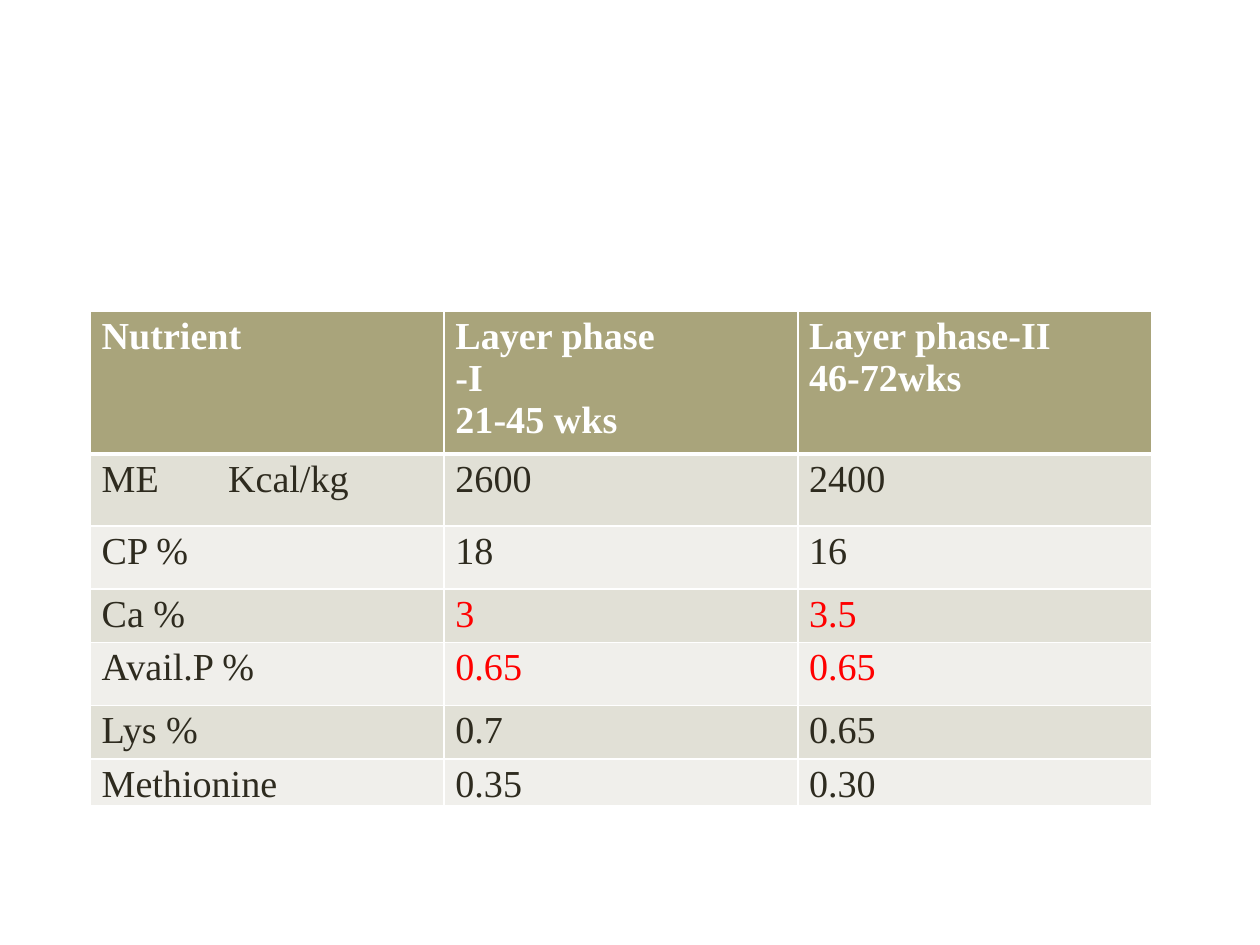
"""Build a slide with a table of layer feed nutrients by laying phase."""
import dataclasses

import pptx
import pptx.dml.color
import pptx.oxml.ns
import pptx.util
from lxml import etree

Cm = pptx.util.Cm


@dataclasses.dataclass(frozen=True)
class Theme:
    font: str = "Times New Roman"
    size: int = 24
    header_fill: str = "A9A47B"
    band_fills: tuple = ("E1E0D6", "F0EFEB")
    header_text: str = "FFFFFF"
    body_text: str = "2E2B1F"
    highlight: str = "FF0000"
    border: str = "FFFFFF"
    thin: int = 1
    thick: int = 3


THEME = Theme()
COLUMN_WIDTH = 7.86
ROW_HEIGHTS = (3.18, 1.6, 1.4, 1.19, 1.4, 1.19, 0.99)
UNIT_TAB = 2.81
HIGHLIGHTED_NUTRIENTS = ("Ca %", "Avail.P %")
NUTRIENTS = (
    (("Nutrient",), ("Layer phase", "-I", "21-45 wks"), ("Layer phase-II", "46-72wks")),
    (("ME\tKcal/kg",), ("2600",), ("2400",)),
    (("CP %",), ("18",), ("16",)),
    (("Ca %",), ("3",), ("3.5",)),
    (("Avail.P %",), ("0.65",), ("0.65",)),
    (("Lys %",), ("0.7",), ("0.65",)),
    (("Methionine",), ("0.35",), ("0.30",)),
)


def rgb(value):
    return pptx.dml.color.RGBColor.from_string(value)


def add_element(parent, tag, **attributes):
    element = etree.SubElement(parent, pptx.oxml.ns.qn(tag))
    for name, value in attributes.items():
        element.set(name, str(value))
    return element


def set_borders(cell, top, bottom):
    properties = cell._tc.get_or_add_tcPr()
    widths = {"L": THEME.thin, "R": THEME.thin, "T": top, "B": bottom}
    for side, width in widths.items():
        line = add_element(properties, f"a:ln{side}", w=int(pptx.util.Pt(width)))
        fill = add_element(line, "a:solidFill")
        add_element(fill, "a:srgbClr", val=THEME.border)


def add_tab_stop(para, position):
    tabs = add_element(para._p.get_or_add_pPr(), "a:tabLst")
    add_element(tabs, "a:tab", pos=int(Cm(position)), algn="l")


def write_lines(cell, lines, color, bold):
    frame = cell.text_frame
    for index, line in enumerate(lines):
        para = frame.add_paragraph() if index else frame.paragraphs[0]
        if "\t" in line:
            add_tab_stop(para, UNIT_TAB)
        span = para.add_run()
        span.text = line
        span.font.name = THEME.font
        span.font.size = pptx.util.Pt(THEME.size)
        span.font.bold = bold
        span.font.color.rgb = rgb(color)


def format_cell(cell, fill, top, bottom):
    cell.margin_left, cell.margin_top = Cm(0.25), Cm(0.1)
    cell.margin_right = cell.margin_bottom = 0
    set_borders(cell, top, bottom)
    cell.fill.solid()
    cell.fill.fore_color.rgb = rgb(fill)


def text_color(row, column):
    if row == 0:
        return THEME.header_text
    if column and NUTRIENTS[row][0][0] in HIGHLIGHTED_NUTRIENTS:
        return THEME.highlight
    return THEME.body_text


def add_nutrient_table(page, left, top):
    columns = len(NUTRIENTS[0])
    table = page.shapes.add_table(
        len(NUTRIENTS), columns, Cm(left), Cm(top),
        Cm(COLUMN_WIDTH * columns), Cm(sum(ROW_HEIGHTS)),
    ).table
    for column in table.columns:
        column.width = Cm(COLUMN_WIDTH)
    for row, nutrient in enumerate(NUTRIENTS):
        table.rows[row].height = Cm(ROW_HEIGHTS[row])
        fill = THEME.band_fills[(row - 1) % 2] if row else THEME.header_fill
        above = THEME.thick if row == 1 else THEME.thin
        below = THEME.thick if row == 0 else THEME.thin
        for column, lines in enumerate(nutrient):
            cell = table.cell(row, column)
            format_cell(cell, fill, above, below)
            write_lines(cell, lines, text_color(row, column), row == 0)


def main():
    deck = pptx.Presentation()
    deck.slide_width, deck.slide_height = Cm(28), Cm(21)
    page = deck.slides.add_slide(deck.slide_layouts.get_by_name("Blank"))
    add_nutrient_table(page, 2.01, 6.91)
    deck.save("out.pptx")


if __name__ == "__main__":
    main()
